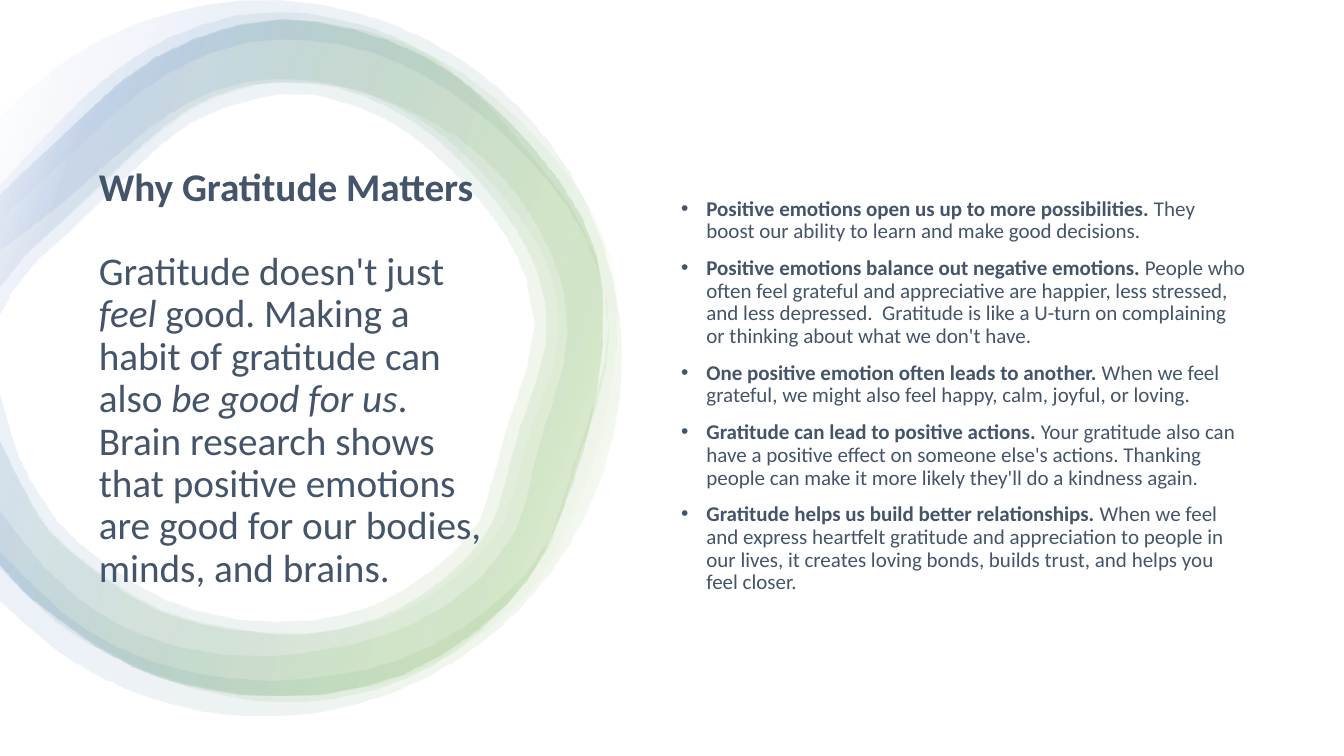
import math

from lxml import etree
from pptx import Presentation
from pptx.dml.color import RGBColor
from pptx.enum import shapes, text
from pptx.oxml import ns
from pptx.util import Pt

WHITE = RGBColor(0xFF, 0xFF, 0xFF)
GREEN = RGBColor(0x70, 0xAD, 0x47)
BLUE = RGBColor(0x44, 0x72, 0xC4)
SLATE = RGBColor(0x44, 0x54, 0x6A)

PAGE_SIZE = (960, 540)
RING_UNIT = 72  # points per unit of the ring outlines
RING_OPACITY = 10
RING_ANGLE = 200
STRETCH = 1.024
FRAME = {"word_wrap": True, "auto_size": text.MSO_AUTO_SIZE.NONE,
         "vertical_anchor": text.MSO_ANCHOR.MIDDLE}

# Each outline runs clockwise from the left edge; inner ones run back.
BRUSH_OUTER = [
    (0, 1.84), (0.6, 1.2), (1.08, 0.76), (1.65, 0.39), (2.33, 0.16), (2.74, 0.13),
    (3.04, 0.14), (3.72, 0.29), (4.33, 0.6), (4.83, 1.04), (5.15, 1.41), (5.65, 2.04),
    (5.93, 2.64), (6.04, 3.3), (5.93, 3.97), (5.73, 4.54), (5.56, 5.12), (5.44, 5.44),
    (5.04, 5.98), (4.75, 6.27), (4.27, 6.61), (3.65, 6.86), (2.99, 6.96), (2.5, 6.94),
    (2.01, 6.85), (1.7, 6.76), (1.1, 6.5), (0.55, 6.16), (0, 5.63)]
BRUSH_INNER = [
    (0, 5.06), (0.43, 5.61), (0.75, 5.91), (1.24, 6.22), (1.8, 6.42), (2.23, 6.49),
    (2.67, 6.5), (2.96, 6.48), (3.52, 6.38), (4.06, 6.2), (4.43, 6), (4.77, 5.72),
    (5.1, 5.28), (5.2, 5.02), (5.34, 4.43), (5.53, 3.83), (5.63, 3.3), (5.55, 2.75),
    (5.32, 2.23), (4.98, 1.76), (4.54, 1.37), (4.03, 1.09), (3.52, 0.89), (2.98, 0.8),
    (2.45, 0.82), (1.96, 0.98), (1.49, 1.27), (1.04, 1.65), (0.57, 2.06), (0, 2.49)]
BAND_OUTER = [
    (0, 1.92), (0.55, 1.4), (1.54, 0.56), (2.78, 0.19), (4.17, 0.54), (5.25, 1.43),
    (5.91, 2.53), (5.91, 3.87), (5.53, 5.15), (5.02, 5.98), (3.99, 6.68), (2.7, 6.9),
    (1.36, 6.63), (0.26, 5.89), (0, 5.6)]
WIDE_INNER = [
    (0, 3.9), (0.17, 4.49), (0.43, 4.96), (0.77, 5.37), (1.66, 5.95), (2.71, 6.16),
    (3.71, 5.99), (4.5, 5.46), (4.76, 5.13), (4.89, 4.7), (5.01, 4.25), (5.22, 3.62),
    (5.29, 3.2), (5.21, 2.77), (5.01, 2.34), (4.69, 1.92), (4.26, 1.49), (3.82, 1.18),
    (3.32, 0.99), (2.78, 0.93), (1.89, 1.21), (1.07, 1.92), (0.69, 2.29), (0.37, 2.57),
    (0.12, 2.88), (0, 3.12)]
SLIM_INNER = [
    (0, 4.37), (0.33, 5.03), (0.69, 5.46), (1.61, 6.07), (2.7, 6.28), (3.27, 6.24),
    (3.76, 6.11), (4.19, 5.88), (4.59, 5.55), (4.87, 5.18), (5.01, 4.73), (5.13, 4.28),
    (5.34, 3.66), (5.41, 3.21), (5.33, 2.73), (5.12, 2.29), (4.78, 1.84), (4.34, 1.39),
    (3.88, 1.08), (3.35, 0.87), (2.78, 0.81), (2.32, 0.88), (1.86, 1.08), (1.41, 1.43),
    (0.98, 1.84), (0.6, 2.2), (0.27, 2.5), (0, 2.84)]
HALO_OUTER = [(2.62 + 3.55 * math.cos(math.radians(12.5 * n)),
               3.55 + 3.55 * math.sin(math.radians(12.5 * n))) for n in range(-11, 12)]
HALO_INNER = [
    (0, 5.46), (0.64, 6.08), (1.19, 6.42), (1.78, 6.63), (2.25, 6.71), (2.72, 6.74),
    (3.03, 6.72), (3.65, 6.63), (4.23, 6.42), (4.77, 6.09), (5.23, 5.67), (5.45, 5.34),
    (5.63, 4.8), (5.93, 3.86), (6.04, 3.23), (5.91, 2.6), (5.62, 2.03), (5.21, 1.54),
    (4.74, 1.11), (4.23, 0.76), (3.67, 0.51), (3.07, 0.4), (2.46, 0.42), (1.89, 0.61),
    (1.37, 0.93), (0.89, 1.35), (0.41, 1.8), (0, 2.17)]

BLUE_GREEN = [(2, WHITE), (16, GREEN), (85, BLUE), (100, WHITE)]
RINGS = [
    (BRUSH_OUTER, BRUSH_INNER, 1, [(37, GREEN), (85, BLUE), (100, WHITE)]),
    (BAND_OUTER, SLIM_INNER, STRETCH, [(2, WHITE), (54, GREEN), (100, WHITE)]),
    (BAND_OUTER, WIDE_INNER, 1, BLUE_GREEN),
    (BAND_OUTER, SLIM_INNER, 1, BLUE_GREEN),
    (HALO_OUTER, HALO_INNER, 1, [(2, WHITE), (16, GREEN), (74, BLUE), (100, WHITE)]),
]

HEADING = [("Why Gratitude Matters", {"bold": True})]
INTRO = [
    ("Gratitude doesn't just ", {}), ("feel", {"italic": True}),
    (" good. Making a habit of gratitude can also ", {}),
    ("be good for us", {"italic": True}),
    (".  Brain research shows that positive emotions are good for our bodies, "
     "minds, and brains.", {})]
REASONS = [
    ("Positive emotions open us up to more possibilities.",
     " They boost our ability to learn and make good decisions."),
    ("Positive emotions balance out negative emotions.",
     " People who often feel grateful and appreciative are happier, less stressed, and "
     "less depressed.  Gratitude is like a U-turn on complaining or thinking about what "
     "we don't have."),
    ("One positive emotion often leads to another.",
     " When we feel grateful, we might also feel happy, calm, joyful, or loving."),
    ("Gratitude can lead to positive actions.",
     " Your gratitude also can have a positive effect on someone else's actions. Thanking "
     "people can make it more likely they'll do a kindness again."),
    ("Gratitude helps us build better relationships.",
     " When we feel and express heartfelt gratitude and appreciation to people in our "
     "lives, it creates loving bonds, builds trust, and helps you feel closer."),
]


def set_all(target, values):
    for name, value in values.items():
        setattr(target, name, value)


def smooth(knots, stride=0.45):
    """Return points on a Catmull-Rom curve, about one stride apart."""
    ends = [knots[0], *knots, knots[-1]]
    points = [knots[0]]
    for a, b, c, d in zip(ends, ends[1:], ends[2:], ends[3:]):
        steps = math.ceil(math.dist(b, c) / stride)
        for t in (step / steps for step in range(1, steps + 1)):
            points.append(tuple(
                (2 * q + (r - p) * t + (2 * p - 5 * q + 4 * r - s) * t ** 2
                 + (3 * q - p - 3 * r + s) * t ** 3) / 2
                for p, q, r, s in zip(a, b, c, d)))
    return points


def fill_gradient(shape, stops):
    """Give the shape a translucent linear gradient."""
    fill = etree.Element(ns.qn("a:gradFill"), rotWithShape="1")
    stop_list = etree.SubElement(fill, ns.qn("a:gsLst"))
    for position, color in stops:
        stop = etree.SubElement(stop_list, ns.qn("a:gs"), pos=str(position * 1000))
        tint = etree.SubElement(stop, ns.qn("a:srgbClr"), val=str(color))
        etree.SubElement(tint, ns.qn("a:alpha"), val=str(RING_OPACITY * 1000))
    etree.SubElement(fill, ns.qn("a:lin"), ang=str(RING_ANGLE * 60000), scaled="0")
    shape.element.spPr.find(ns.qn("a:custGeom")).addnext(fill)


def add_ring(group, outer, inner, stretch, stops):
    points = [(Pt(x * stretch * RING_UNIT), Pt(y * RING_UNIT))
              for x, y in smooth(outer) + smooth(inner)]
    builder = group.shapes.build_freeform(*points[0])
    builder.add_line_segments(points[1:], close=True)
    ring = builder.convert_to_shape()
    ring.shadow.inherit = False
    ring.line.fill.background()
    fill_gradient(ring, stops)


def add_backdrop(page):
    backdrop = page.shapes.add_shape(
        shapes.MSO_SHAPE.RECTANGLE, 0, 0, *map(Pt, PAGE_SIZE))
    backdrop.shadow.inherit = False
    backdrop.fill.solid()
    backdrop.fill.fore_color.rgb = WHITE
    backdrop.line.fill.background()
    return backdrop


def write_para(para, spans, size, gap):
    set_all(para, {"alignment": text.PP_ALIGN.LEFT, "line_spacing": 0.9,
                   "space_before": Pt(gap)})
    for words, style in spans:
        span = para.add_run()
        span.text = words
        set_all(span.font, {"name": "Calibri", "size": Pt(size), "bold": False, **style})
        span.font.color.rgb = SLATE


def add_bullet(para):
    props = para._p.get_or_add_pPr()
    props.set("marL", str(Pt(18)))
    props.set("indent", str(Pt(-18)))
    etree.SubElement(props, ns.qn("a:buFont"), typeface="Arial")
    etree.SubElement(props, ns.qn("a:buChar"), char="•")


def write_title(title):
    set_all(title, {"left": Pt(63.4), "top": Pt(162), "width": Pt(288.7),
                    "height": Pt(217.4)})
    frame = title.text_frame
    set_all(frame, FRAME)
    write_para(frame.paragraphs[0], HEADING, 28, 0)
    write_para(frame.add_paragraph(), INTRO, 28, 30)


def add_reasons(page):
    box = page.shapes.add_textbox(Pt(479.5), Pt(77), Pt(417.6), Pt(412))
    frame = box.text_frame
    set_all(frame, FRAME)
    for number, (claim, detail) in enumerate(REASONS):
        para = frame.add_paragraph() if number else frame.paragraphs[0]
        write_para(para, [(claim, {"bold": True}), (detail, {})], 15, 10)
        add_bullet(para)


def main():
    deck = Presentation()
    deck.slide_width, deck.slide_height = map(Pt, PAGE_SIZE)
    page = deck.slides.add_slide(deck.slide_layouts[5])
    title = page.shapes.title
    backdrop = add_backdrop(page)
    rings = page.shapes.add_group_shape()
    for ring in RINGS:
        add_ring(rings, *ring)
    for behind in (backdrop, rings):
        title.element.addprevious(behind.element)
    write_title(title)
    add_reasons(page)
    deck.save("out.pptx")


if __name__ == "__main__":
    main()
